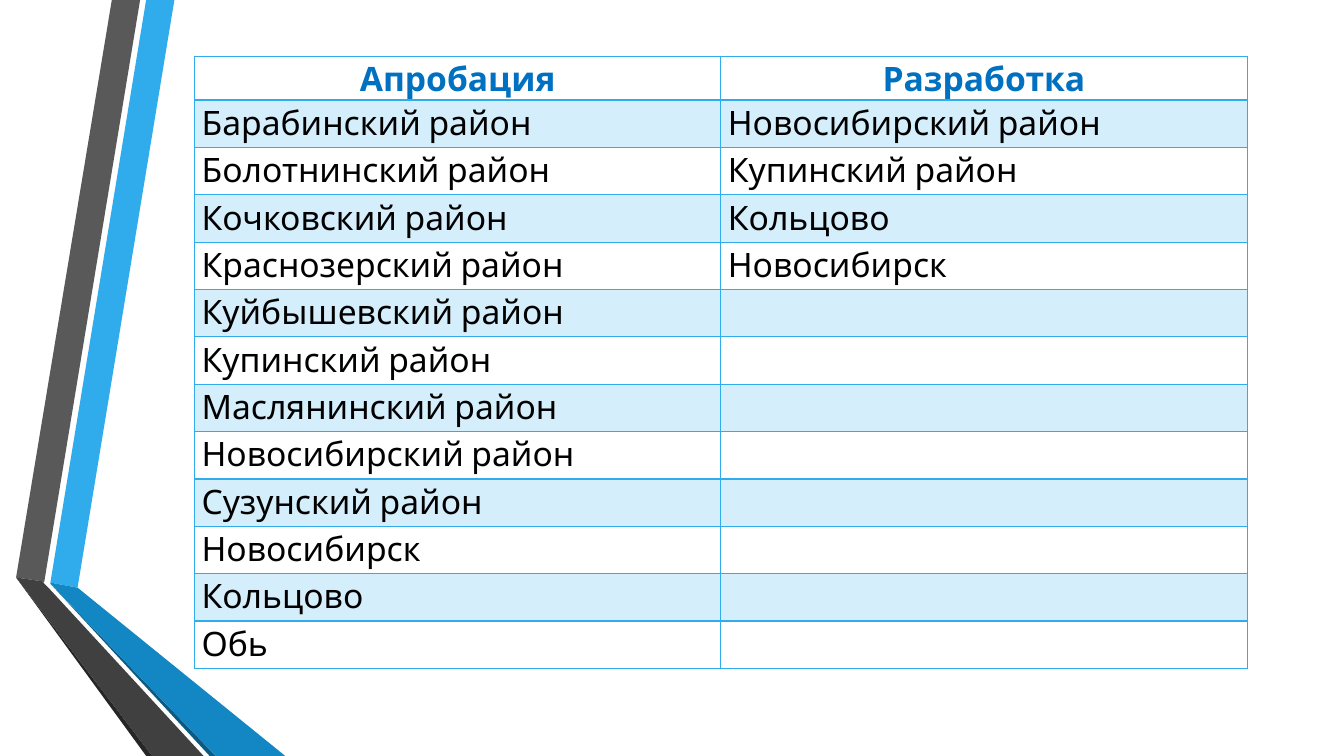
from dataclasses import dataclass
from itertools import zip_longest

from lxml import etree
from pptx import Presentation
from pptx.dml.color import RGBColor
from pptx.enum.text import MSO_ANCHOR, PP_ALIGN
from pptx.oxml.ns import qn
from pptx.util import Inches, Pt

CENTER, LEFT = PP_ALIGN.CENTER, PP_ALIGN.LEFT
TOP = MSO_ANCHOR.TOP
BLANK_LAYOUT = 6

# Grid: 1333 columns by 750 rows of square units
UNIT = Inches(0.01)
COLUMNS, ROWS = 1333, 750

COLORS = {
    "sky": "30ACEC", "ocean": "1287C3", "deep": "0C5A82",
    "gray": "595959", "dark": "404040", "shade": "262626",
    "heading": "0070C0", "text": "000000",
}
FONT = "Cabin"
BAND_OPACITY = 20

TABLE_LEFT, TABLE_TOP = 193, 56
COLUMN_WIDTH, HEADER_HEIGHT, ROW_HEIGHT = 522, 41, 47
SIDE_MARGIN = 7

HEADINGS = ("Апробация", "Разработка")
TESTING = (
    "Барабинский район", "Болотнинский район", "Кочковский район",
    "Краснозерский район", "Куйбышевский район", "Купинский район",
    "Маслянинский район", "Новосибирский район", "Сузунский район",
    "Новосибирск", "Кольцово", "Обь",
)
DEVELOPMENT = ("Новосибирский район", "Купинский район", "Кольцово", "Новосибирск")


@dataclass(frozen=True)
class Ribbon:
    color: str
    corners: tuple[tuple[int, int], ...]


@dataclass(frozen=True)
class CellStyle:
    color: str
    bold: bool
    align: PP_ALIGN
    bottom_line: int


RIBBONS = (
    Ribbon("sky", ((50, 578), (77, 583), (173, 0), (145, 0))),
    Ribbon("gray", ((139, 0), (111, 0), (16, 573), (44, 577))),
    Ribbon("shade", ((16, 573), (145, 750), (151, 750))),
    Ribbon("deep", ((50, 579), (208, 750), (214, 750))),
    Ribbon("ocean", ((50, 579), (214, 750), (283, 750), (77, 583), (50, 578))),
    Ribbon("dark", ((202, 750), (48, 583), (43, 578), (44, 577), (16, 573), (151, 750))),
)
HEADER = CellStyle("heading", True, CENTER, 2)
BODY = CellStyle("text", False, LEFT, 1)


def rgb(name: str) -> RGBColor:
    return RGBColor.from_string(COLORS[name])


def apply(target, values: dict) -> None:
    for name, value in values.items():
        setattr(target, name, value)


def draw_ribbon(slide, ribbon: Ribbon) -> None:
    start, *others = ribbon.corners
    builder = slide.shapes.build_freeform(*start, scale=UNIT)
    builder.add_line_segments(others, close=True)
    shape = builder.convert_to_shape()
    shape.shadow.inherit = False
    shape.fill.solid()
    shape.fill.fore_color.rgb = rgb(ribbon.color)
    shape.line.fill.background()


def fill_cell(cell, banded: bool) -> None:
    if not banded:
        cell.fill.background()
        return
    cell.fill.solid()
    cell.fill.fore_color.rgb = rgb("sky")
    color = cell._tc.tcPr.find(qn("a:solidFill"))[0]
    etree.SubElement(color, qn("a:alpha"), val=str(BAND_OPACITY * 1000))


def border_cell(cell, bottom: int, top: int) -> None:
    widths = {"a:lnL": 1, "a:lnR": 1, "a:lnT": top, "a:lnB": bottom}
    for index, (side, width) in enumerate(widths.items()):
        line = etree.Element(qn(side), w=str(Pt(width)))
        fill = etree.SubElement(line, qn("a:solidFill"))
        etree.SubElement(fill, qn("a:srgbClr"), val=COLORS["sky"])
        cell._tc.tcPr.insert(index, line)


def write_cell(cell, text: str, style: CellStyle) -> None:
    apply(cell, {
        "margin_left": SIDE_MARGIN * UNIT, "margin_right": SIDE_MARGIN * UNIT,
        "margin_top": 0, "margin_bottom": 0, "vertical_anchor": TOP,
    })
    if not text:
        return
    para = cell.text_frame.paragraphs[0]
    apply(para, {"alignment": style.align, "line_spacing": 1.07})
    span = para.add_run()
    span.text = text
    apply(span.font, {"name": FONT, "size": Pt(24), "bold": style.bold})
    span.font.color.rgb = rgb(style.color)


def draw_table(slide) -> None:
    records = [HEADINGS, *zip_longest(TESTING, DEVELOPMENT, fillvalue="")]
    height = HEADER_HEIGHT + ROW_HEIGHT * len(TESTING)
    table = slide.shapes.add_table(
        len(records), len(HEADINGS), TABLE_LEFT * UNIT, TABLE_TOP * UNIT,
        COLUMN_WIDTH * len(HEADINGS) * UNIT, height * UNIT,
    ).table
    apply(table, {"first_row": False, "horz_banding": False})
    for column in table.columns:
        column.width = COLUMN_WIDTH * UNIT
    for row, record in enumerate(records):
        style = BODY if row else HEADER
        table.rows[row].height = (ROW_HEIGHT if row else HEADER_HEIGHT) * UNIT
        for column, text in enumerate(record):
            cell = table.cell(row, column)
            write_cell(cell, text, style)
            fill_cell(cell, banded=row % 2 == 1)
            border_cell(cell, style.bottom_line, top=HEADER.bottom_line if row == 1 else 1)


def main() -> None:
    deck = Presentation()
    apply(deck, {"slide_width": COLUMNS * UNIT, "slide_height": ROWS * UNIT})
    page = deck.slides.add_slide(deck.slide_layouts[BLANK_LAYOUT])
    # Folded ribbons along the left edge
    for ribbon in RIBBONS:
        draw_ribbon(page, ribbon)
    # Districts by kind of work
    draw_table(page)
    deck.save("out.pptx")


if __name__ == "__main__":
    main()
